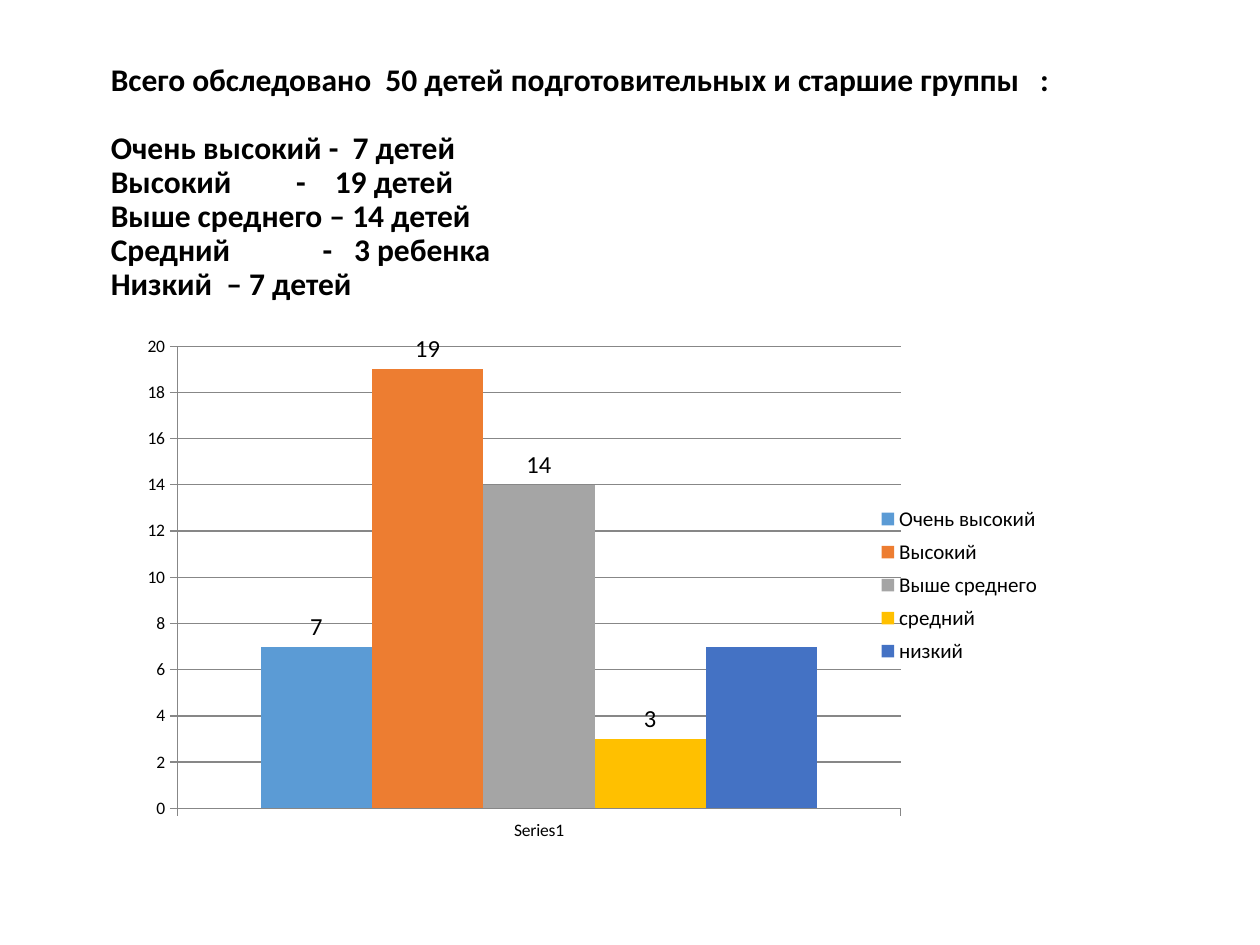
from dataclasses import dataclass

from lxml import etree
from pptx import Presentation
from pptx import util as u
from pptx.chart.data import CategoryChartData
from pptx.dml.color import RGBColor
from pptx.enum import chart as kinds, text
from pptx.oxml.ns import qn


@dataclass(frozen=True)
class Theme:
    font: str = "Calibri"
    ink: str = "000000"
    axis: str = "878787"
    title_size: float = 18
    axis_size: float = 10
    legend_size: float = 12
    label_size: float = 14


@dataclass(frozen=True)
class Line:
    words: str
    tabs: tuple[float, ...] = ()
    space_after: float = 0


@dataclass(frozen=True)
class Level:
    name: str
    children: int
    color: str
    labelled: bool = True


@dataclass(frozen=True)
class Area:
    """A place inside the chart, as fractions of its size."""
    x: float
    y: float
    w: float
    h: float


THEME = Theme()
LINES = (
    Line("Всего обследовано  50 детей подготовительных и старшие группы\t:", (531,), 19.5),
    Line("Очень высокий -  7 детей"),
    Line("Высокий\t-\t19 детей", (106, 128)),
    Line("Выше среднего – 14 детей"),
    Line("Средний\t-\t3 ребенка", (121, 139)),
    Line("Низкий  – 7 детей"),
)
LEVELS = (
    Level("Очень высокий", 7, "5B9BD5"),
    Level("Высокий", 19, "ED7D31"),
    Level("Выше среднего", 14, "A5A5A5"),
    Level("средний", 3, "FFC000"),
    Level("низкий", 7, "4472C4", labelled=False),
)
PLOT_AREA = Area(0.05, 0.04, 0.74, 0.88)
LEGEND_AREA = Area(0.76, 0.33, 0.18, 0.33)


def style_font(font, size: float, bold: bool = False) -> None:
    font.name, font.size, font.bold = THEME.font, u.Pt(size), bold
    font.color.rgb = RGBColor.from_string(THEME.ink)


def add_tabs(para, stops: tuple[float, ...]) -> None:
    tab_list = etree.SubElement(para._p.get_or_add_pPr(), qn("a:tabLst"))
    for stop in stops:
        etree.SubElement(tab_list, qn("a:tab"), pos=str(int(u.Pt(stop))), algn="l")


def add_summary(page) -> None:
    box = page.shapes.add_textbox(u.Pt(56.2), u.Pt(33), u.Pt(620.6), u.Pt(185))
    frame = box.text_frame
    frame.word_wrap = True
    frame.vertical_anchor = text.MSO_ANCHOR.TOP
    for index, line in enumerate(LINES):
        para = frame.add_paragraph() if index else frame.paragraphs[0]
        para.text = line.words
        if line.tabs:
            add_tabs(para, line.tabs)
        para.line_spacing = 0.9
        para.space_after = u.Pt(line.space_after)
        style_font(para.font, THEME.title_size, bold=True)


def make_layout(area: Area, inner: bool = False):
    layout = etree.Element(qn("c:layout"))
    manual = etree.SubElement(layout, qn("c:manualLayout"))
    values = {"layoutTarget": "inner"} if inner else {}
    values |= {"xMode": "edge", "yMode": "edge"}
    values |= {side: str(getattr(area, side)) for side in "xywh"}
    for tag, value in values.items():
        etree.SubElement(manual, qn(f"c:{tag}"), val=value)
    return layout


def drop_layout(parent) -> None:
    for old in parent.findall(qn("c:layout")):
        parent.remove(old)


def style_axis(axis) -> None:
    axis.major_tick_mark = kinds.XL_TICK_MARK.OUTSIDE
    axis.minor_tick_mark = kinds.XL_TICK_MARK.NONE
    axis.format.line.color.rgb = RGBColor.from_string(THEME.axis)
    axis.format.line.width = u.Pt(0.75)


def add_level_chart(page) -> None:
    data = CategoryChartData(number_format="General")
    data.categories = ["Series1"]
    for level in LEVELS:
        data.add_series(level.name, [level.children])
    chart = page.shapes.add_chart(
        kinds.XL_CHART_TYPE.COLUMN_CLUSTERED,
        u.Pt(73.4), u.Pt(185.8), u.Pt(558.7), u.Pt(300.2), data).chart
    chart.has_title = False
    style_font(chart.font, THEME.axis_size)

    # Columns and their values
    plot = chart.plots[0]
    plot.gap_width, plot.overlap, plot.vary_by_categories = 150, 0, False
    for series, level in zip(plot.series, LEVELS):
        series.format.fill.solid()
        series.format.fill.fore_color.rgb = RGBColor.from_string(level.color)
        if level.labelled:
            labels = series.data_labels
            labels.show_value = True
            labels.position = kinds.XL_LABEL_POSITION.OUTSIDE_END
            style_font(labels.font, THEME.label_size)

    # Axes
    style_axis(chart.category_axis)
    values = chart.value_axis
    style_axis(values)
    values.minimum_scale, values.maximum_scale, values.major_unit = 0, 20, 2
    values.has_major_gridlines = True
    grid = values.major_gridlines.format.line
    grid.color.rgb = RGBColor.from_string(THEME.axis)
    grid.width = u.Pt(0.75)

    # Legend
    chart.has_legend = True
    legend = chart.legend
    legend.position = kinds.XL_LEGEND_POSITION.RIGHT
    legend.include_in_layout = False
    style_font(legend.font, THEME.legend_size)

    # Places of the plot and the legend
    plot_area = chart._chartSpace.chart.plotArea
    drop_layout(plot_area)
    plot_area.insert(0, make_layout(PLOT_AREA, inner=True))
    drop_layout(legend._element)
    legend._element.find(qn("c:legendPos")).addnext(make_layout(LEGEND_AREA))


def main() -> None:
    deck = Presentation()
    deck.slide_width, deck.slide_height = u.Pt(720), u.Pt(540)
    page = deck.slides.add_slide(deck.slide_layouts[6])
    add_summary(page)
    add_level_chart(page)
    deck.save("out.pptx")


if __name__ == "__main__":
    main()
